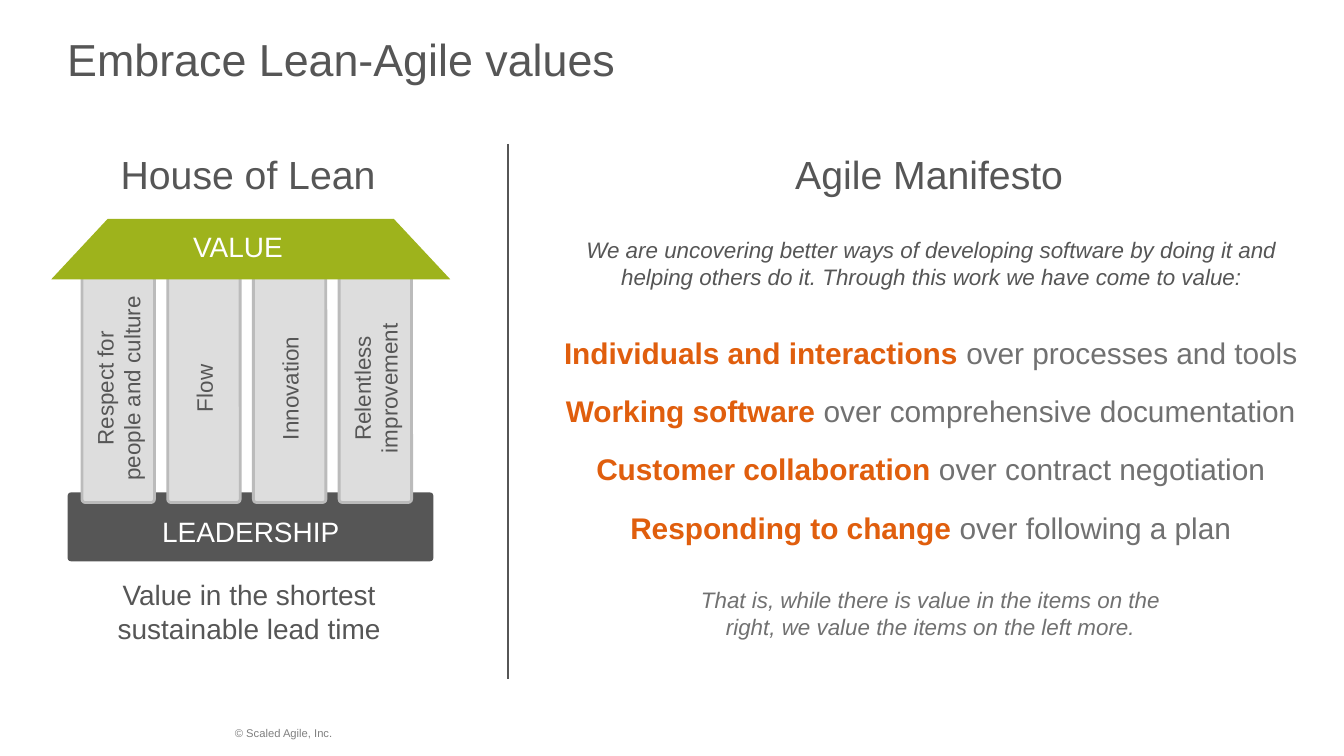
from dataclasses import dataclass

from lxml.etree import SubElement
from pptx import Presentation
from pptx.dml.color import RGBColor
from pptx.enum.shapes import MSO_CONNECTOR, MSO_SHAPE
from pptx.enum.text import MSO_ANCHOR, PP_ALIGN as Align
from pptx.oxml.ns import qn
from pptx.util import Cm, Pt


@dataclass(frozen=True)
class Theme:
    font: str = "Arial"
    dark: str = "565656"
    grey: str = "717171"
    pale: str = "808080"
    white: str = "FFFFFF"
    orange: str = "E05E0D"
    green: str = "9EB31C"
    pillar: str = "DDDDDD"
    pillar_edge: str = "BBBBBB"
    title: int = 24
    heading: int = 21
    statement: int = 16
    label: int = 15
    small: int = 12
    footer: int = 6


THEME = Theme()

PILLARS = [  # label lines, label length, label height
    (["Respect for", "people and culture"], 4.01, 1.27),
    (["Flow"], 1.42, 0.76),
    (["Innovation"], 2.49, 0.76),
    (["Relentless", "improvement"], 2.97, 1.27),
]
STATEMENTS = [
    ("Individuals and interactions ", "over processes and tools"),
    ("Working software ", "over comprehensive documentation"),
    ("Customer collaboration ", "over contract negotiation"),
    ("Responding to change ", "over following a plan"),
]


def place(shape, left, top, width, height):
    shape.left, shape.top = Cm(left), Cm(top)
    shape.width, shape.height = Cm(width), Cm(height)


def add_run(paragraph, text, size=THEME.label, color=THEME.dark, bold=False, italic=False):
    run = paragraph.add_run()
    run.text = text
    font = run.font
    font.name, font.size, font.bold, font.italic = THEME.font, Pt(size), bold, italic
    font.color.rgb = RGBColor.from_string(color)


def add_text(slide, lines, left, top, width, height, align=Align.CENTER, wrap=True,
             rotation=0, **style):
    box = slide.shapes.add_textbox(Cm(left), Cm(top), Cm(width), Cm(height))
    box.rotation = rotation
    frame = box.text_frame
    frame.word_wrap = wrap
    for index, line in enumerate(lines):
        paragraph = frame.add_paragraph() if index else frame.paragraphs[0]
        paragraph.alignment = align
        add_run(paragraph, line, **style)


def add_block(slide, kind, left, top, width, height, fill, adjustment, edge=None):
    shape = slide.shapes.add_shape(kind, Cm(left), Cm(top), Cm(width), Cm(height))
    shape.shadow.inherit = False
    shape.adjustments[0] = adjustment
    shape.fill.solid()
    shape.fill.fore_color.rgb = RGBColor.from_string(fill)
    if edge:
        shape.line.color.rgb = RGBColor.from_string(edge)
        shape.line.width = Pt(1.5)
    else:
        shape.line.fill.background()


def add_divider(slide, x, top, bottom):
    line = slide.shapes.add_connector(MSO_CONNECTOR.STRAIGHT, Cm(x), Cm(top), Cm(x), Cm(bottom))
    line.line.color.rgb = RGBColor.from_string(THEME.dark)
    line.line.width = Pt(0.75)
    SubElement(line._element.spPr, qn("a:effectLst"))


def fill_title(slide, text):
    title = slide.shapes.title
    place(title, 1.27, 0.48, 22.86, 0.94)
    frame = title.text_frame
    frame.margin_left = frame.margin_right = frame.margin_top = frame.margin_bottom = 0
    frame.vertical_anchor = MSO_ANCHOR.TOP
    paragraph = frame.paragraphs[0]
    paragraph.alignment = Align.LEFT
    paragraph.line_spacing = 1.12
    add_run(paragraph, text, size=THEME.title)


def fill_statements(slide):
    body = slide.placeholders[1]
    place(body, 10.21, 6.2, 14.76, 4.27)
    frame = body.text_frame
    for index, (preferred, other) in enumerate(STATEMENTS):
        paragraph = frame.add_paragraph() if index else frame.paragraphs[0]
        properties = paragraph._p.get_or_add_pPr()
        properties.set("marL", "0")
        properties.set("indent", "0")
        SubElement(properties, qn("a:buNone"))
        paragraph.alignment = Align.CENTER
        paragraph.space_before, paragraph.space_after = Pt(0), Pt(12)
        add_run(paragraph, preferred, size=THEME.statement, color=THEME.orange, bold=True)
        add_run(paragraph, other, size=THEME.statement, color=THEME.grey)


def add_house(slide):
    # Foundation
    add_block(slide, MSO_SHAPE.ROUNDED_RECTANGLE, 1.28, 9.31, 6.91, 1.3, THEME.dark, 0.046)
    add_text(slide, ["LEADERSHIP"], 1.3, 9.6, 6.88, 1.07, color=THEME.white)

    # Pillars, each with a label turned to read upwards
    first, pitch, width, top, height, label_middle = 1.55, 1.62, 1.37, 5.16, 4.34, 7.34
    for index, (lines, length, depth) in enumerate(PILLARS):
        left = first + index * pitch
        add_block(slide, MSO_SHAPE.ROUNDED_RECTANGLE, left, top, width, height,
                  THEME.pillar, 0.046, edge=THEME.pillar_edge)
        add_text(slide, lines, left + (width - length) / 2, label_middle - depth / 2,
                 length, depth, wrap=False, rotation=270, size=THEME.small)

    # Roof
    add_block(slide, MSO_SHAPE.TRAPEZOID, 0.97, 4.14, 7.54, 1.14, THEME.green, 0.934)
    add_text(slide, ["VALUE"], 3.4, 4.22, 2.62, 1.07, align=Align.LEFT, wrap=False,
             color=THEME.white)


def main():
    presentation = Presentation()
    presentation.slide_width, presentation.slide_height = Cm(25.4), Cm(14.29)
    slide = presentation.slides.add_slide(presentation.slide_layouts[1])
    fill_title(slide, "Embrace Lean-Agile values")

    # Left half: House of Lean
    add_text(slide, ["House of Lean"], 2.03, 2.72, 5.36, 1.14, align=Align.LEFT,
             wrap=False, size=THEME.heading)
    add_house(slide)
    add_text(slide, ["Value in the shortest", "sustainable lead time"], 0.58, 10.8, 8.26, 1.55)

    add_divider(slide, 9.6, 2.72, 12.83)

    # Right half: Agile Manifesto
    add_text(slide, ["Agile Manifesto"], 14.78, 2.72, 5.61, 1.14, align=Align.LEFT,
             wrap=False, size=THEME.heading)
    add_text(slide, ["We are uncovering better ways of developing software by doing it and "
                     "helping others do it. Through this work we have come to value:"],
             10.64, 4.34, 13.94, 1.27, size=THEME.small, italic=True)
    fill_statements(slide)
    add_text(slide, ["That is, while there is value in the items on the right, "
                     "we value the items on the left more."],
             12.98, 10.95, 9.22, 1.27, size=THEME.small, color=THEME.grey, italic=True)

    # Footer
    add_text(slide, ["© Scaled Agile, Inc."], 4.19, 13.61, 5.26, 0.51, align=Align.LEFT,
             size=THEME.footer, color=THEME.pale)
    presentation.save("out.pptx")


if __name__ == "__main__":
    main()
